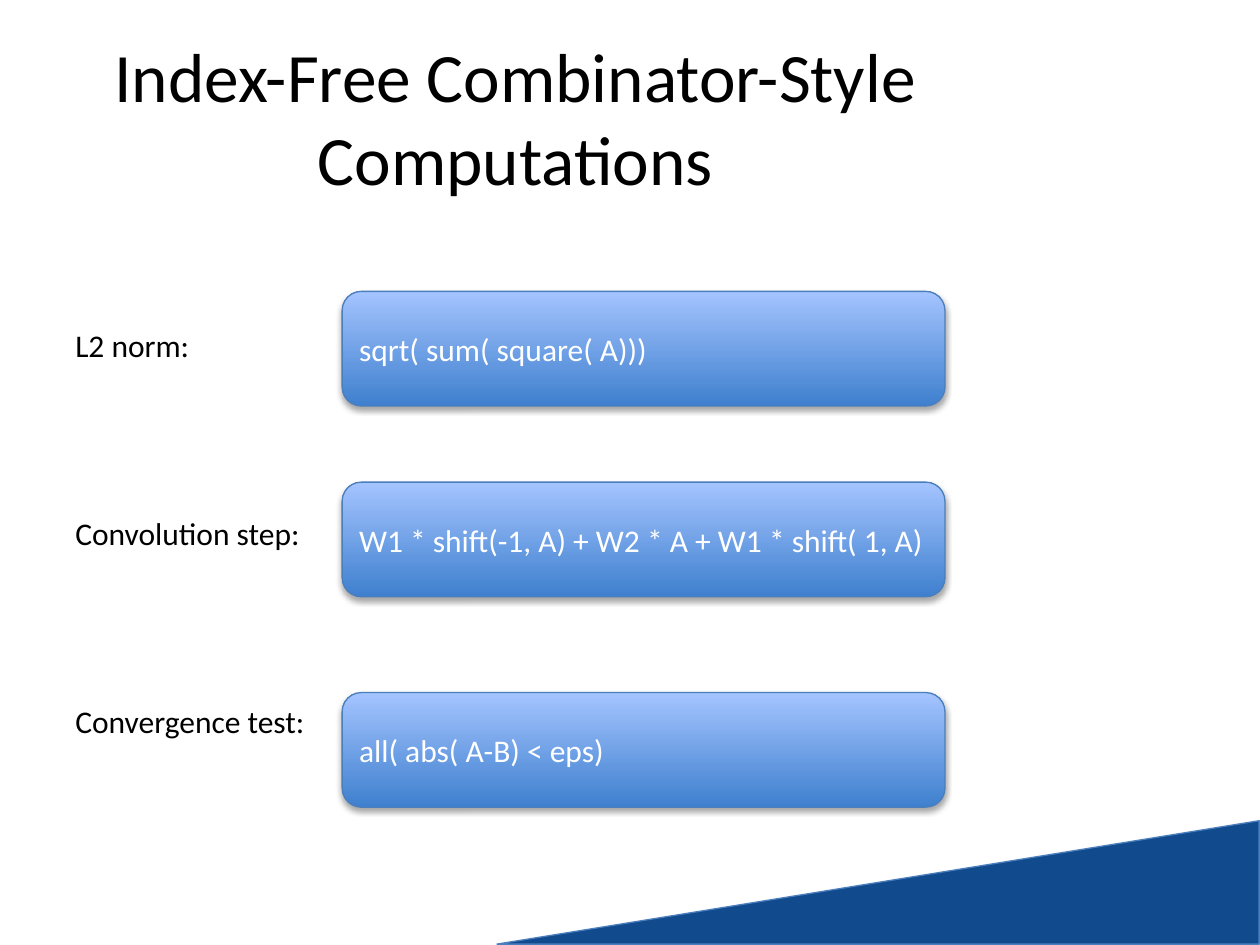
import pptx
import pptx.util
import pptx.dml.color
import pptx.enum.shapes
import pptx.enum.text

Pt = pptx.util.Pt
Kind = pptx.enum.shapes.MSO_SHAPE
Align = pptx.enum.text.PP_ALIGN
Anchor = pptx.enum.text.MSO_ANCHOR


def tint(code):
    return pptx.dml.color.RGBColor.from_string(code)


def write(frame, text, size=18, color="000000", align=Align.LEFT,
          anchor=Anchor.TOP, wrap=True, inset=(6.5, 3), gap=0):
    frame.word_wrap = wrap
    frame.vertical_anchor = anchor
    frame.margin_left = frame.margin_right = Pt(inset[0])
    frame.margin_top = frame.margin_bottom = Pt(inset[1])
    frame.text = text
    for i, para in enumerate(frame.paragraphs):
        para.alignment = align
        para.space_before = Pt(gap if i else 0)
        para.font.size = Pt(size)
        para.font.name = "Calibri"
        para.font.color.rgb = tint(color)


deck = pptx.Presentation()
deck.slide_width, deck.slide_height = Pt(720), Pt(540)
slide = deck.slides.add_slide(deck.slide_layouts[5])
shapes = slide.shapes

wedge = shapes.add_shape(Kind.RIGHT_TRIANGLE, Pt(466.5), Pt(286.5), Pt(70.5), Pt(435.5))
wedge.rotation = 270
wedge.fill.solid()
wedge.fill.fore_color.rgb = tint("114B8E")
wedge.line.color.rgb = tint("4B7EBC")
wedge.line.width = Pt(0.75)

title = shapes.title
title.left, title.top, title.width, title.height = Pt(36), Pt(21.6), Pt(517), Pt(90)
write(title.text_frame, "Index-Free Combinator-Style Computations", size=39.6,
      align=Align.CENTER, anchor=Anchor.MIDDLE, inset=(7.2, 3.6))

labels = shapes.add_textbox(Pt(36.5), Pt(183), Pt(145), Pt(290))
write(labels.text_frame, "L2 norm:\nConvolution step:\nConvergence test:",
      wrap=False, gap=86)

steps = [
    (166.5, "sqrt( sum( square( A)))"),
    (275.5, "W1 * shift(-1, A) + W2 * A + W1 * shift( 1, A)"),
    (395.75, "all( abs( A-B) < eps)"),
]
for top, code in steps:
    box = shapes.add_shape(Kind.ROUNDED_RECTANGLE, Pt(195.5), Pt(top), Pt(344.5), Pt(65.5))
    box.fill.gradient()
    box.fill.gradient_angle = 90
    for stop, place, shade in zip(box.fill.gradient_stops, (0, 1), ("3F80CE", "A4C4FF")):
        stop.position = place
        stop.color.rgb = tint(shade)
    box.line.color.rgb = tint("4B7EBC")
    box.line.width = Pt(0.75)
    write(box.text_frame, code, color="FFFFFF", anchor=Anchor.MIDDLE)

deck.save("out.pptx")
